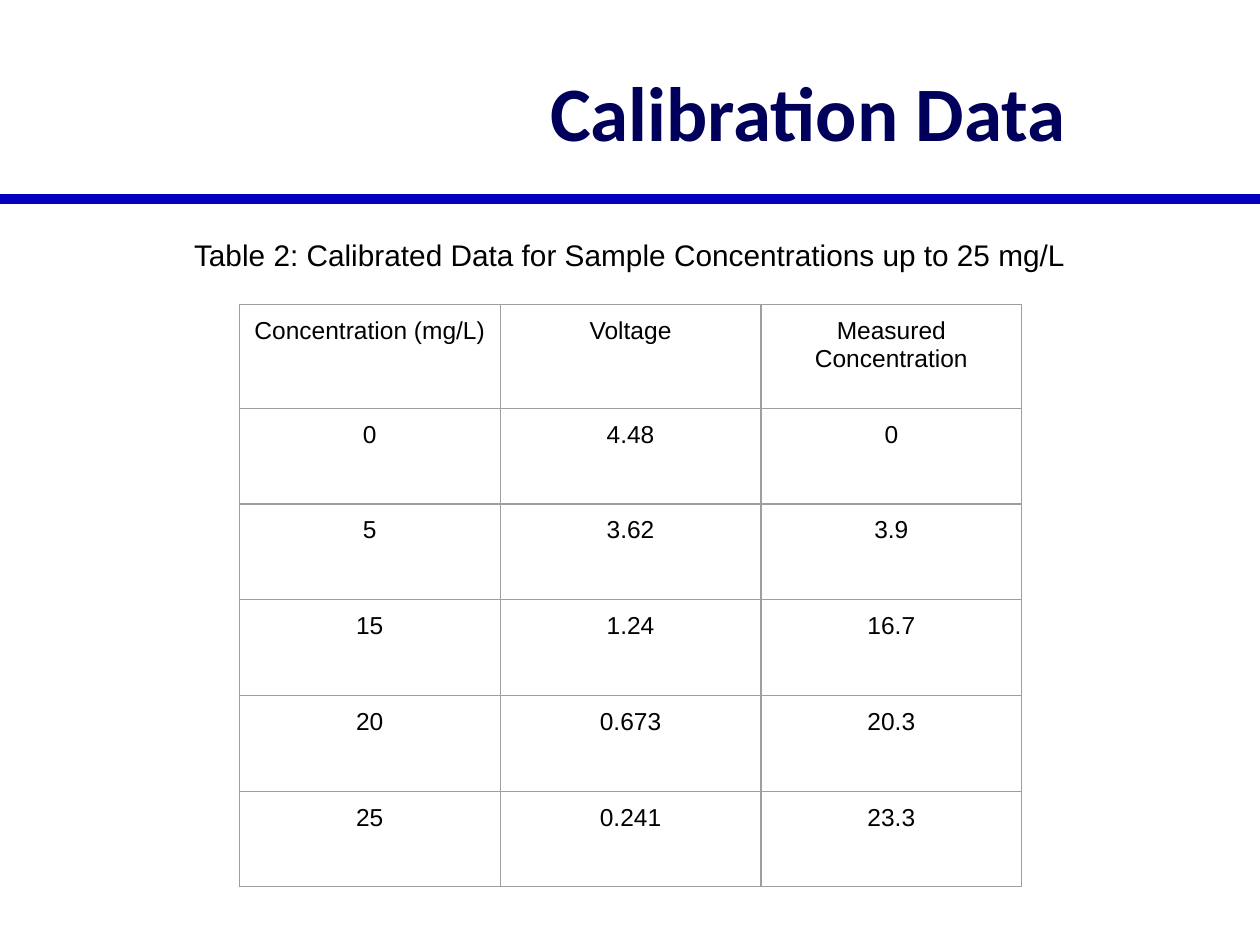
from lxml import etree
from pptx import Presentation
from pptx.dml.color import RGBColor
from pptx.enum.shapes import MSO_CONNECTOR
from pptx.enum.text import MSO_ANCHOR, PP_ALIGN
from pptx.oxml.ns import qn
from pptx.util import Inches, Pt

STRAIGHT = MSO_CONNECTOR.STRAIGHT
TOP, MIDDLE = MSO_ANCHOR.TOP, MSO_ANCHOR.MIDDLE
CENTER = PP_ALIGN.CENTER

NAVY = RGBColor(0x00, 0x00, 0x5A)
BLUE = RGBColor(0x03, 0x00, 0xBE)
BLACK = RGBColor(0x00, 0x00, 0x00)
GRAY = RGBColor(0x9E, 0x9E, 0x9E)

TITLE_FORMAT = {"name": "Calibri", "size": Pt(44), "bold": True}
CAPTION_FORMAT = {"name": "Arial", "size": Pt(17), "bold": False}
CELL_FORMAT = {"name": "Arial", "size": Pt(14), "bold": False}
MARGINS = ("margin_left", "margin_top", "margin_right", "margin_bottom")

COLUMN_WIDTH = 2.07
HEADER_HEIGHT, ROW_HEIGHT = 0.82, 0.76
CALIBRATION_ROWS = [
    ("Concentration (mg/L)", "Voltage", "Measured Concentration"),
    ("0", "4.48", "0"),
    ("5", "3.62", "3.9"),
    ("15", "1.24", "16.7"),
    ("20", "0.673", "20.3"),
    ("25", "0.241", "23.3"),
]


def set_margins(target):
    for margin in MARGINS:
        setattr(target, margin, Inches(0.1))


def write_text(text_frame, text, font_format, color):
    paragraph = text_frame.paragraphs[0]
    paragraph.alignment = CENTER
    run = paragraph.add_run()
    run.text = text
    for attribute, value in font_format.items():
        setattr(run.font, attribute, value)
    run.font.color.rgb = color


def add_text(slide, box, text, font_format, color, anchor=TOP):
    shape = slide.shapes.add_textbox(*map(Inches, box))
    text_frame = shape.text_frame
    text_frame.word_wrap = True
    text_frame.vertical_anchor = anchor
    set_margins(text_frame)
    write_text(text_frame, text, font_format, color)


def add_rule(slide, y):
    rule = slide.shapes.add_connector(
        STRAIGHT, Inches(0), Inches(y), Inches(10), Inches(y))
    rule.line.color.rgb = BLUE
    rule.line.width = Pt(6)
    etree.SubElement(rule._element.spPr, qn("a:effectLst"))


def add_borders(cell):
    properties = cell._tc.get_or_add_tcPr()
    for side in ("L", "R", "T", "B"):
        line = etree.SubElement(properties, qn(f"a:ln{side}"), w=str(Pt(0.75)))
        fill = etree.SubElement(line, qn("a:solidFill"))
        etree.SubElement(fill, qn("a:srgbClr"), val=str(GRAY))


def add_table(slide, left, top, rows):
    column_count = len(rows[0])
    heights = [HEADER_HEIGHT] + [ROW_HEIGHT] * (len(rows) - 1)
    table = slide.shapes.add_table(
        len(rows), column_count, Inches(left), Inches(top),
        Inches(COLUMN_WIDTH * column_count), Inches(sum(heights))).table
    table.first_row = False
    table.horz_banding = False
    for column in table.columns:
        column.width = Inches(COLUMN_WIDTH)
    for row, height, texts in zip(table.rows, heights, rows):
        row.height = Inches(height)
        for cell, text in zip(row.cells, texts):
            set_margins(cell)
            add_borders(cell)
            cell.fill.background()
            write_text(cell.text_frame, text, CELL_FORMAT, BLACK)


def main():
    presentation = Presentation()
    presentation.slide_width = Inches(10)
    presentation.slide_height = Inches(7.5)
    slide = presentation.slides.add_slide(presentation.slide_layouts[6])

    # Title and the rule beneath it
    add_rule(slide, 1.58)
    add_text(slide, (3.08, 0.25, 6.67, 1.25), "Calibration Data",
             TITLE_FORMAT, NAVY, MIDDLE)

    # Calibration table with its caption
    add_table(slide, 1.9, 2.42, CALIBRATION_ROWS)
    add_text(slide, (1.4, 1.78, 7.2, 0.58),
             "Table 2: Calibrated Data for Sample Concentrations up to 25 mg/L",
             CAPTION_FORMAT, BLACK)

    presentation.save("out.pptx")


if __name__ == "__main__":
    main()
